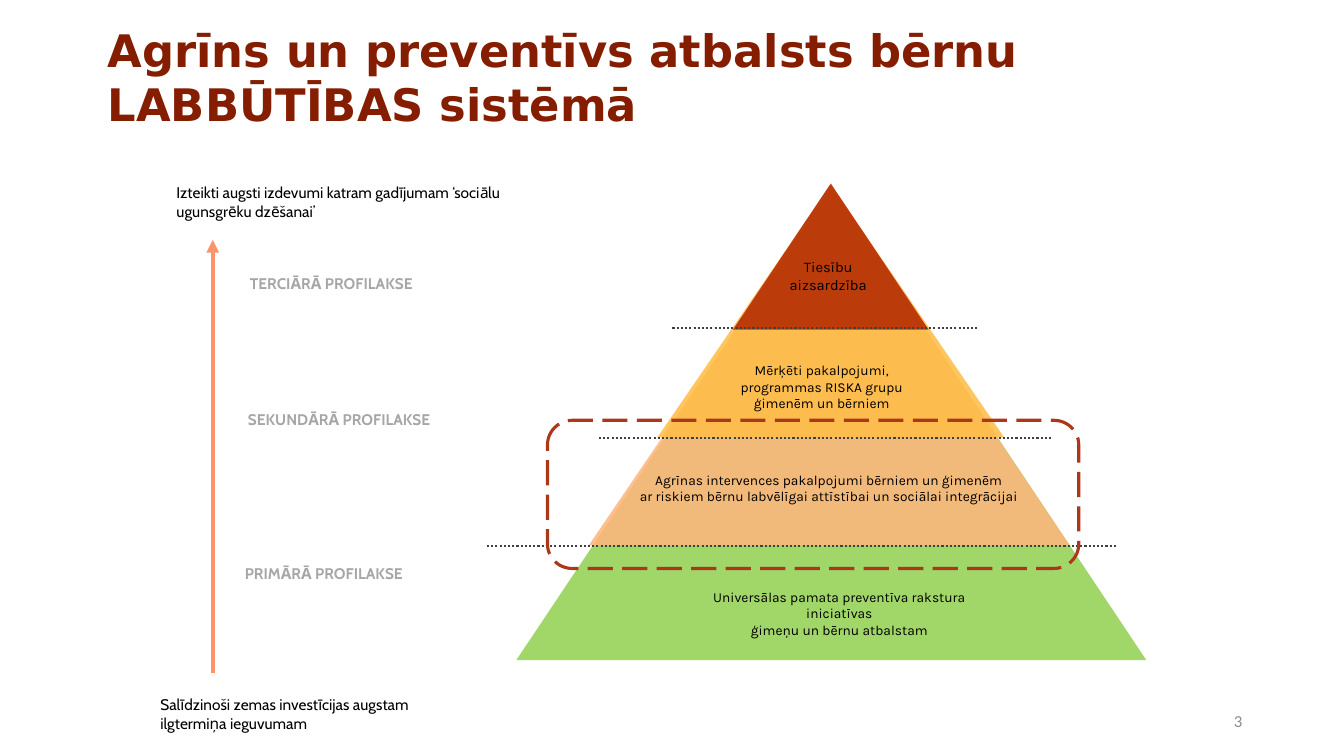
from lxml import etree
from pptx import Presentation
from pptx.dml.color import RGBColor
from pptx.enum.dml import MSO_LINE
from pptx.enum.shapes import MSO_CONNECTOR, MSO_SHAPE
from pptx.enum.text import MSO_ANCHOR, PP_ALIGN
from pptx.oxml.ns import qn
from pptx.util import Inches, Pt

TOP, MIDDLE = MSO_ANCHOR.TOP, MSO_ANCHOR.MIDDLE
LEFT, CENTER, RIGHT = PP_ALIGN.LEFT, PP_ALIGN.CENTER, PP_ALIGN.RIGHT
TRIANGLE, ROUNDED = MSO_SHAPE.ISOSCELES_TRIANGLE, MSO_SHAPE.ROUNDED_RECTANGLE
STRAIGHT = MSO_CONNECTOR.STRAIGHT
DOTTED, LONG_DASH = MSO_LINE.ROUND_DOT, MSO_LINE.LONG_DASH

BLACK = RGBColor(0x00, 0x00, 0x00)
MAROON = RGBColor(0x85, 0x1D, 0x00)
PAGE_GREY = RGBColor(0x8C, 0x8C, 0x8C)
LABEL_GREY = RGBColor(0xA6, 0xA6, 0xA6)
DOT_GREY = RGBColor(0x40, 0x40, 0x40)
FRAME_RED = RGBColor(0xAC, 0x38, 0x19)
ARROW_ORANGE = RGBColor(0xFC, 0x93, 0x6A)
GREEN = RGBColor(0x92, 0xD0, 0x50)
PEACH = RGBColor(0xFF, 0xB5, 0x7D)
AMBER = RGBColor(0xFF, 0xBD, 0x47)
RED = RGBColor(0xB2, 0x26, 0x00)

TITLE = "Agrīns un preventīvs atbalsts bērnu LABBŪTĪBAS sistēmā"
PAGE = "3"
OPACITY = 86

# box (left, top, width, height), apex position, colour
TIERS = [
    ((5.12, 1.87, 6.25, 4.68), 0.5, GREEN),
    ((5.84, 1.88, 4.77, 3.53), 0.503, PEACH),
    ((6.52, 1.83, 3.44, 2.51), 0.5, AMBER),
    ((7.27, 1.82, 1.94, 1.45), 0.5, RED),
]
# box, size, wrap, paragraphs
TIER_TEXTS = [
    ((6.74, 5.8, 3.17, 0.52), 9.8, False,
     ["Universālas pamata preventīva rakstura iniciatīvas", "ģimeņu un bērnu atbalstam"]),
    ((5.98, 4.64, 4.48, 0.64), 9.8, True,
     ["Agrīnas intervences pakalpojumi bērniem un ģimenēm",
      "ar riskiem bērnu labvēlīgai attīstībai un sociālai integrācijai"]),
    ((6.74, 3.55, 2.82, 0.78), 9.8, True,
     ["Mērķēti pakalpojumi,\vprogrammas RISKA grupu\vģimenēm un bērniem"]),
    ((7.65, 2.52, 1.13, 0.6), 10.5, True, ["Tiesību", "aizsardzība"]),
]
# left, right, y
DIVIDERS = [(6.67, 9.69, 3.25), (5.94, 10.42, 4.35), (4.83, 11.08, 5.42)]
FRAME = (5.43, 4.17, 5.27, 1.47)
ARROW = (2.11, 2.38, 6.68)  # x, top, bottom
LEVELS = [
    ((2.38, 2.67, 2.4, 0.3), "TERCIĀRĀ PROFILAKSE"),
    ((2.36, 4.02, 2.51, 0.3), "SEKUNDĀRĀ PROFILAKSE"),
    ((2.33, 5.55, 2.4, 0.3), "PRIMĀRĀ PROFILAKSE"),
]
COSTS = [
    ((1.75, 1.59, 3.75, 0.83),
     "Izteikti augsti izdevumi katram gadījumam ‘sociālu ugunsgrēku dzēšanai’"),
    ((1.59, 6.66, 2.77, 0.84),
     "Salīdzinoši zemas investīcijas augstam ilgtermiņa ieguvumam"),
]


def inches(box):
    return [Inches(v) for v in box]


def add_text(slide, box, paragraphs, font, size, color, bold=False,
             align=LEFT, anchor=TOP, inset=(0.1, 0.05), wrap=True):
    tf = slide.shapes.add_textbox(*inches(box)).text_frame
    tf.word_wrap = wrap
    tf.vertical_anchor = anchor
    tf.margin_left = tf.margin_right = Inches(inset[0])
    tf.margin_top = tf.margin_bottom = Inches(inset[1])
    tf.text = "\n".join(paragraphs)
    for p in tf.paragraphs:
        p.alignment = align
        p.font.name, p.font.size, p.font.bold = font, Pt(size), bold
        p.font.color.rgb = color


def add_tier(slide, box, apex, color):
    sp = slide.shapes.add_shape(TRIANGLE, *inches(box))
    sp.shadow.inherit = False
    sp.adjustments[0] = apex
    sp.fill.solid()
    sp.fill.fore_color.rgb = color
    sp.line.fill.background()
    rgb = sp.fill._xPr.find(qn("a:solidFill"))[0]
    etree.SubElement(rgb, qn("a:alpha"), val=str(OPACITY * 1000))


def add_line(slide, start, end, color, width):
    line = slide.shapes.add_connector(STRAIGHT, *inches(start + end))
    line.line.color.rgb = color
    line.line.width = Pt(width)
    etree.SubElement(line._element.spPr, qn("a:effectLst"))
    return line


def main():
    prs = Presentation()
    prs.slide_width, prs.slide_height = Inches(13.33), Inches(7.5)
    slide = prs.slides.add_slide(prs.slide_layouts[6])

    add_text(slide, (0.97, 0.34, 10, 0.84), [TITLE], "DejaVu Sans", 32, MAROON,
             bold=True, anchor=MIDDLE)
    add_text(slide, (9.42, 6.95, 3, 0.4), [PAGE], "Calibri", 12, PAGE_GREY,
             align=RIGHT, anchor=MIDDLE)

    for box, apex, color in TIERS:
        add_tier(slide, box, apex, color)
    for box, size, wrap, paragraphs in TIER_TEXTS:
        add_text(slide, box, paragraphs, "Karla", size, BLACK, align=CENTER,
                 inset=(0.07, 0.04), wrap=wrap)
    for left, right, y in DIVIDERS:
        divider = add_line(slide, (left, y), (right, y), DOT_GREY, 1.5)
        divider.line.dash_style = DOTTED

    frame = slide.shapes.add_shape(ROUNDED, *inches(FRAME))
    frame.shadow.inherit = False
    frame.fill.background()
    frame.line.color.rgb = FRAME_RED
    frame.line.width = Pt(2.25)
    frame.line.dash_style = LONG_DASH

    x, top, bottom = ARROW
    arrow = add_line(slide, (x, bottom), (x, top), ARROW_ORANGE, 3)
    etree.SubElement(arrow.line._get_or_add_ln(), qn("a:tailEnd"), type="triangle")
    for box, text in LEVELS:
        add_text(slide, box, [text], "Cabin", 11, LABEL_GREY, bold=True)
    for box, text in COSTS:
        add_text(slide, box, [text], "Cabin", 11, BLACK, anchor=MIDDLE, inset=(0, 0))

    prs.save("out.pptx")


if __name__ == "__main__":
    main()
